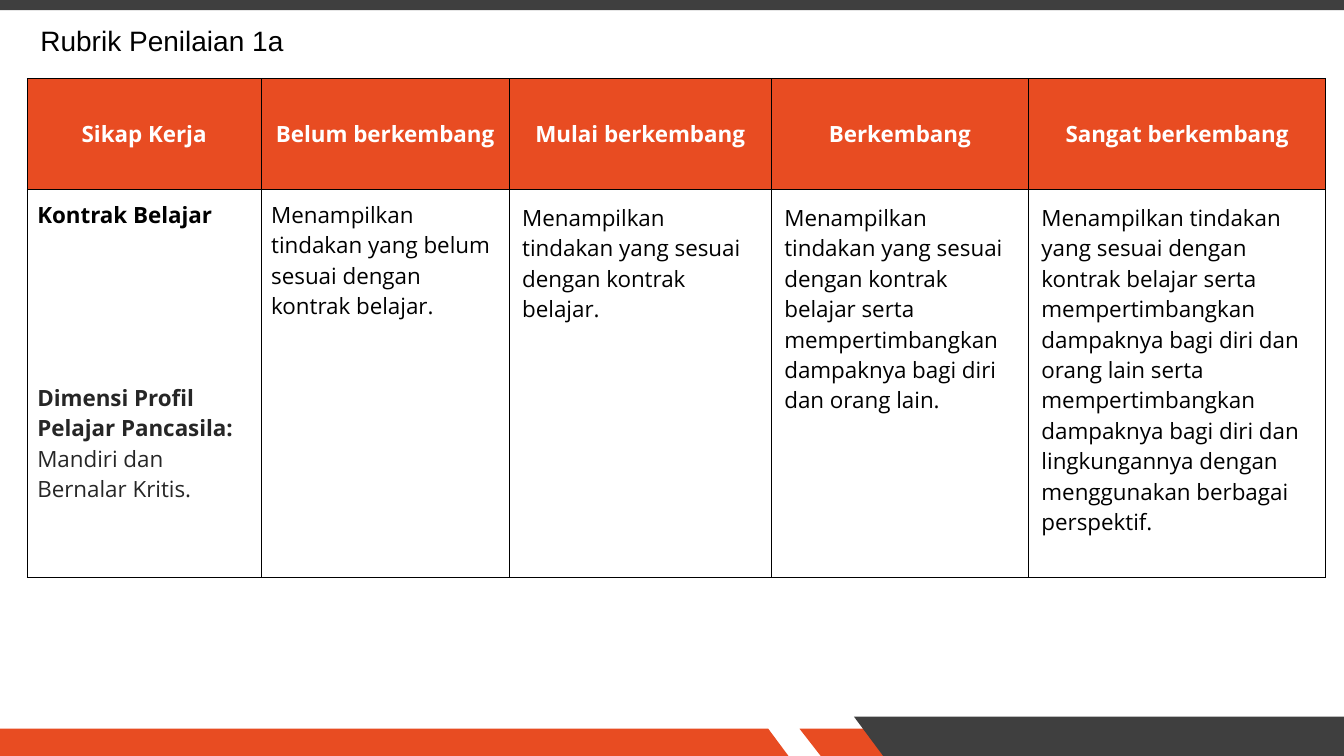
import pptx
import pptx.util
import pptx.dml.color
import pptx.enum.shapes
import pptx.enum.text
import pptx.oxml

PX = 9144  # 100 px to the inch
WIDE, HIGH = 1333, 750
HUES = {"red": "E84C22", "dark": "3F3F3F", "ink": "000000", "gray": "262626", "white": "FFFFFF"}
ALIGN = pptx.enum.text.PP_ALIGN
ANCHOR = pptx.enum.text.MSO_ANCHOR
NS = "http://schemas.openxmlformats.org/drawingml/2006/main"

COLS = [232, 246, 260, 255, 295]
ROWS = [110, 385]
HEADS = ["Sikap Kerja", "Belum berkembang", "Mulai berkembang", "Berkembang", "Sangat berkembang"]
LEVELS = [
    "Menampilkan tindakan yang belum sesuai dengan kontrak belajar.",
    "Menampilkan tindakan yang sesuai dengan kontrak belajar.",
    "Menampilkan tindakan yang sesuai dengan kontrak belajar serta mempertimbangkan "
    "dampaknya bagi diri dan orang lain.",
    "Menampilkan tindakan yang sesuai dengan kontrak belajar serta mempertimbangkan "
    "dampaknya bagi diri dan orang lain serta mempertimbangkan dampaknya bagi diri dan "
    "lingkungannya dengan menggunakan berbagai perspektif.",
]


def color(name):
    return pptx.dml.color.RGBColor.from_string(HUES[name])


def format(item, values):
    for name, value in values.items():
        setattr(item, name, value)


def inset(item, gap):
    """Give a text frame or a cell the same margin on all sides."""
    sides = ("left", "top", "right", "bottom")
    format(item, {f"margin_{side}": gap * PX for side in sides})


def write(para, text, hue, size=16, font="Open Sans", bold=False):
    run = para.add_run()
    run.text = text
    format(run.font, {"name": font, "size": pptx.util.Pt(size), "bold": bold})
    run.font.color.rgb = color(hue)


def paint(shape, hue):
    shape.shadow.inherit = False
    shape.fill.solid()
    shape.fill.fore_color.rgb = color(hue)
    shape.line.fill.background()


def draw_shard(slide, points, hue):
    form = slide.shapes.build_freeform(*points[0], scale=PX)
    form.add_line_segments(points[1:], close=True)
    paint(form.convert_to_shape(), hue)


def draw_top(slide, x, y, w, h):
    rect = pptx.enum.shapes.MSO_SHAPE.RECTANGLE
    bar = slide.shapes.add_shape(rect, x * PX, y * PX, w * PX, h * PX)
    paint(bar, "dark")


def draw_foot(slide, x, y, w, h):
    """Draw the slanted bands; the red ones start 12 px below the dark one."""
    end, base, red = x + w, y + h, y + 12
    draw_shard(slide, [(x + 793, red), (x + 898, red), (x + 898, base), (x + 814, base)], "red")
    draw_shard(slide, [(x, red), (x + 762, red), (x + 782, base), (x, base)], "red")
    draw_shard(slide, [(x + 847, y), (end, y), (end, base), (x + 876, base)], "dark")


def draw_title(slide, x, y, w, h):
    title = slide.shapes.title
    format(title, {"left": x * PX, "top": y * PX, "width": w * PX, "height": h * PX})
    frame = title.text_frame
    format(frame, {"word_wrap": True, "vertical_anchor": ANCHOR.TOP,
                   "auto_size": pptx.enum.text.MSO_AUTO_SIZE.SHAPE_TO_FIT_TEXT})
    inset(frame, 13)
    para = frame.paragraphs[0]
    para.alignment = ALIGN.LEFT
    write(para, "Rubrik Penilaian 1a", "ink", 20, "Arial")


def edge(cell):
    """Add a thin black border on all four sides."""
    props = cell._tc.get_or_add_tcPr()
    for side in "LRTB":
        props.append(pptx.oxml.parse_xml(
            f'<a:ln{side} xmlns:a="{NS}" w="9525"><a:solidFill>'
            f'<a:srgbClr val="{HUES["ink"]}"/></a:solidFill></a:ln{side}>'))


def draw_table(slide, x, y):
    frame = slide.shapes.add_table(len(ROWS), len(COLS), x * PX, y * PX,
                                   sum(COLS) * PX, sum(ROWS) * PX)
    table = frame.table
    format(table, {"first_row": False, "horz_banding": False})
    for col, width in zip(table.columns, COLS):
        col.width = width * PX
    for row, height in zip(table.rows, ROWS):
        row.height = height * PX
    for cell in table.iter_cells():
        edge(cell)

    for num, text in enumerate(HEADS):
        cell = table.cell(0, num)
        cell.fill.solid()
        cell.fill.fore_color.rgb = color("red")
        cell.vertical_anchor = ANCHOR.MIDDLE
        inset(cell, 13)
        para = cell.text_frame.paragraphs[0]
        para.alignment = ALIGN.CENTER
        write(para, text, "white", bold=True)

    for num in range(len(COLS)):
        cell = table.cell(1, num)
        cell.fill.background()
        inset(cell, 10 if num < 2 else 13)
        if num:
            write(cell.text_frame.paragraphs[0], LEVELS[num - 1], "ink")

    topic = table.cell(1, 0).text_frame
    write(topic.paragraphs[0], "Kontrak Belajar", "ink", bold=True)
    para = topic.add_paragraph()
    para.space_before = pptx.util.Pt(109)
    write(para, "Dimensi Profil Pelajar Pancasila: ", "gray", bold=True)
    write(para, "Mandiri dan Bernalar Kritis.", "gray")


def main():
    deck = pptx.Presentation()
    format(deck, {"slide_width": WIDE * PX, "slide_height": HIGH * PX})
    slide = deck.slides.add_slide(deck.slide_layouts.get_by_name("Title Only"))
    draw_foot(slide, 0, 711, WIDE, 39)
    draw_top(slide, 0, 0, WIDE, 10)
    draw_title(slide, 27, 10, 1001, 61)
    draw_table(slide, 27, 78)
    deck.save("out.pptx")


if __name__ == "__main__":
    main()
